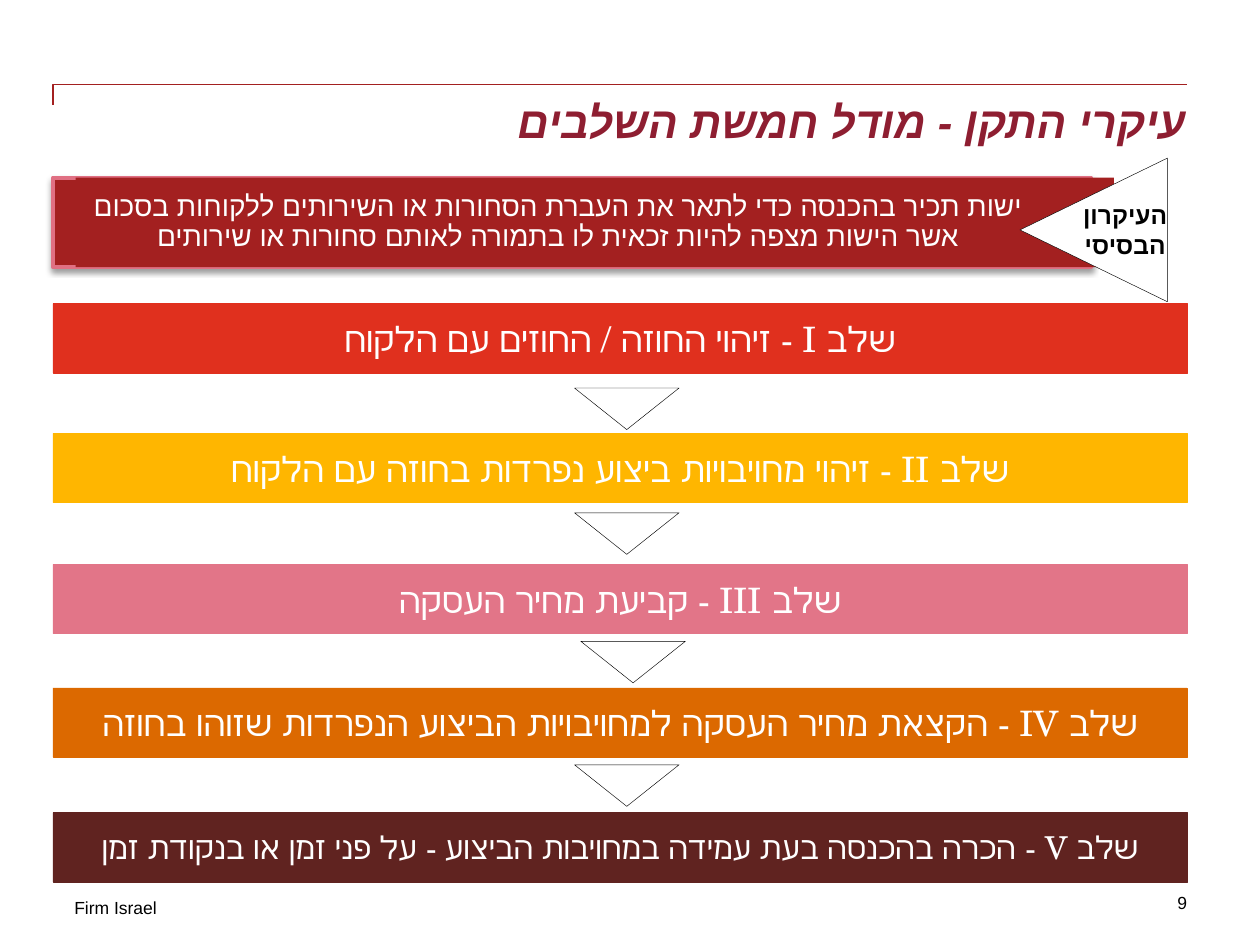
from dataclasses import dataclass

from lxml.etree import SubElement as Sub
from pptx import Presentation
from pptx.dml.color import RGBColor
from pptx.enum.shapes import MSO_SHAPE as Shape
from pptx.enum.text import MSO_ANCHOR as Anchor, PP_ALIGN as Align
from pptx.oxml.ns import qn
from pptx.util import Inches, Pt

COLORS = {
    "white": "FFFFFF", "black": "000000", "title": "8E1E31",
    "rule": "A32020", "edge": "E07083", "red": "E0301E",
    "gold": "FFB600", "pink": "E27588", "orange": "DC6900",
    "brown": "602320",
}
SANS, SERIF = "Arial", "TeX Gyre Schola"
LEFT, WIDTH = 0.42, 9


@dataclass
class Box:
    left: float
    top: float
    width: float
    height: float

    def lengths(self) -> list:
        return [Inches(n) for n in (self.left, self.top, self.width, self.height)]


@dataclass
class Style:
    size: float
    color: str
    font: str = SANS
    align: Align = Align.CENTER
    bold: bool = False
    slant: bool = False


@dataclass
class Step:
    top: float
    color: str
    text: str
    size: int = 20


STEPS = [
    Step(2.41, "red", "שלב I - זיהוי החוזה / החוזים עם הלקוח"),
    Step(3.44, "gold", "שלב II - זיהוי מחויבויות ביצוע נפרדות בחוזה עם הלקוח"),
    Step(4.48, "pink", "שלב III - קביעת מחיר העסקה"),
    Step(5.46, "orange", "שלב IV - הקצאת מחיר העסקה למחויבויות הביצוע הנפרדות שזוהו בחוזה"),
    Step(6.45, "brown", "שלב V - הכרה בהכנסה בעת עמידה במחויבות הביצוע - על פני זמן או בנקודת זמן", 18),
]
ARROWS = [(4.56, 3.08), (4.56, 4.07), (4.61, 5.09), (4.56, 6.07)]


def rgb(name: str) -> RGBColor:
    return RGBColor.from_string(COLORS[name])


def write(frame, text: str, style: Style) -> None:
    """Set one right-to-left paragraph and format its run."""
    frame.text = text
    frame.word_wrap = True
    par = frame.paragraphs[0]
    par.alignment = style.align
    par._p.get_or_add_pPr().set("rtl", "1")
    font = par.runs[0].font
    font.size, font.name = Pt(style.size), style.font
    font.bold, font.italic = style.bold, style.slant
    font.color.rgb = rgb(style.color)
    # Hebrew letters take the complex-script font
    Sub(font._element, qn("a:cs"), typeface=style.font)


def inset(frame, left: float, top: float, right: float, bottom: float) -> None:
    frame.margin_left, frame.margin_top = Inches(left), Inches(top)
    frame.margin_right, frame.margin_bottom = Inches(right), Inches(bottom)


def label(slide, box: Box, text: str, style: Style, tight: bool = True):
    frame = slide.shapes.add_textbox(*box.lengths()).text_frame
    if tight:
        inset(frame, 0, 0, 0, 0)
    write(frame, text, style)


def block(slide, kind: Shape, box: Box, fill: str, line: str = "", width: float = 0.25):
    shape = slide.shapes.add_shape(kind, *box.lengths())
    shape.shadow.inherit = False
    shape.fill.solid()
    shape.fill.fore_color.rgb = rgb(fill)
    if line:
        shape.line.color.rgb = rgb(line)
        shape.line.width = Pt(width)
    else:
        shape.line.fill.background()
    return shape


def shade(shape) -> None:
    """Drop a soft shadow straight down."""
    effects = shape._element.spPr.find(qn("a:effectLst"))
    outer = Sub(effects, qn("a:outerShdw"), blurRad=str(Pt(3.1)),
                dist=str(Pt(1.6)), dir="5400000", rotWithShape="0")
    color = Sub(outer, qn("a:srgbClr"), val=COLORS["black"])
    Sub(color, qn("a:alpha"), val="38000")


def frame_rule(slide) -> None:
    top, low = Inches(0.67), Inches(0.83)
    pen = slide.shapes.build_freeform(Inches(LEFT), low)
    pen.add_line_segments([(Inches(LEFT), top), (Inches(LEFT + WIDTH), top)], close=False)
    rule = pen.convert_to_shape()
    rule.shadow.inherit = False
    rule.fill.background()
    rule.line.color.rgb = rgb("rule")
    rule.line.width = Pt(1)


def main() -> None:
    deck = Presentation()
    deck.slide_width, deck.slide_height = Inches(10), Inches(7.5)
    slide = deck.slides.add_slide(deck.slide_layouts[6])

    # Footer, top rule and title
    label(slide, Box(0.59, 7.12, 1.65, 0.17), "Firm Israel",
          Style(10, "black", align=Align.LEFT))
    frame_rule(slide)
    label(slide, Box(0.58, 0.75, 8.83, 1), "עיקרי התקן - מודל חמשת השלבים",
          Style(25, "title", align=Align.RIGHT, bold=True, slant=True))
    label(slide, Box(7.75, 7.08, 1.67, 0.17), "9",
          Style(10, "black", align=Align.RIGHT))

    # Five steps
    for step in STEPS:
        band = block(slide, Shape.RECTANGLE, Box(LEFT, step.top, WIDTH, 0.55),
                     step.color, step.color)
        band.text_frame.vertical_anchor = Anchor.MIDDLE
        write(band.text_frame, step.text, Style(step.size, "white", SERIF))

    # Arrows between the steps
    for left, top in ARROWS:
        block(slide, Shape.FLOWCHART_MERGE, Box(left, top, 0.83, 0.33), "white", "black")

    # Core principle: shaded plate, text panel and pointer
    plate = Box(LEFT, 1.41, 8.24, 0.71)
    shade(block(slide, Shape.RECTANGLE, plate, "rule", "edge", 2.25))
    panel = block(slide, Shape.RECTANGLE, Box(0.6, 1.41, 8.24, 0.71), "rule")
    frame = panel.text_frame
    inset(frame, 0.04, 0.04, 0.62, 0.04)
    frame.vertical_anchor = Anchor.MIDDLE
    write(frame, "ישות תכיר בהכנסה כדי לתאר את העברת הסחורות או השירותים ללקוחות בסכום "
          "אשר הישות מצפה להיות זכאית לו בתמורה לאותם סחורות או שירותים",
          Style(16, "white"))
    frame.paragraphs[0].line_spacing = 0.9
    point = block(slide, Shape.FLOWCHART_MERGE, Box(8.11, 1.24, 1.14, 1.17), "white", "black")
    point.rotation = 90
    label(slide, Box(8.43, 1.54, 1, 0.57), "העיקרון הבסיסי",
          Style(14, "black", bold=True), tight=False)

    deck.save("out.pptx")


if __name__ == "__main__":
    main()
